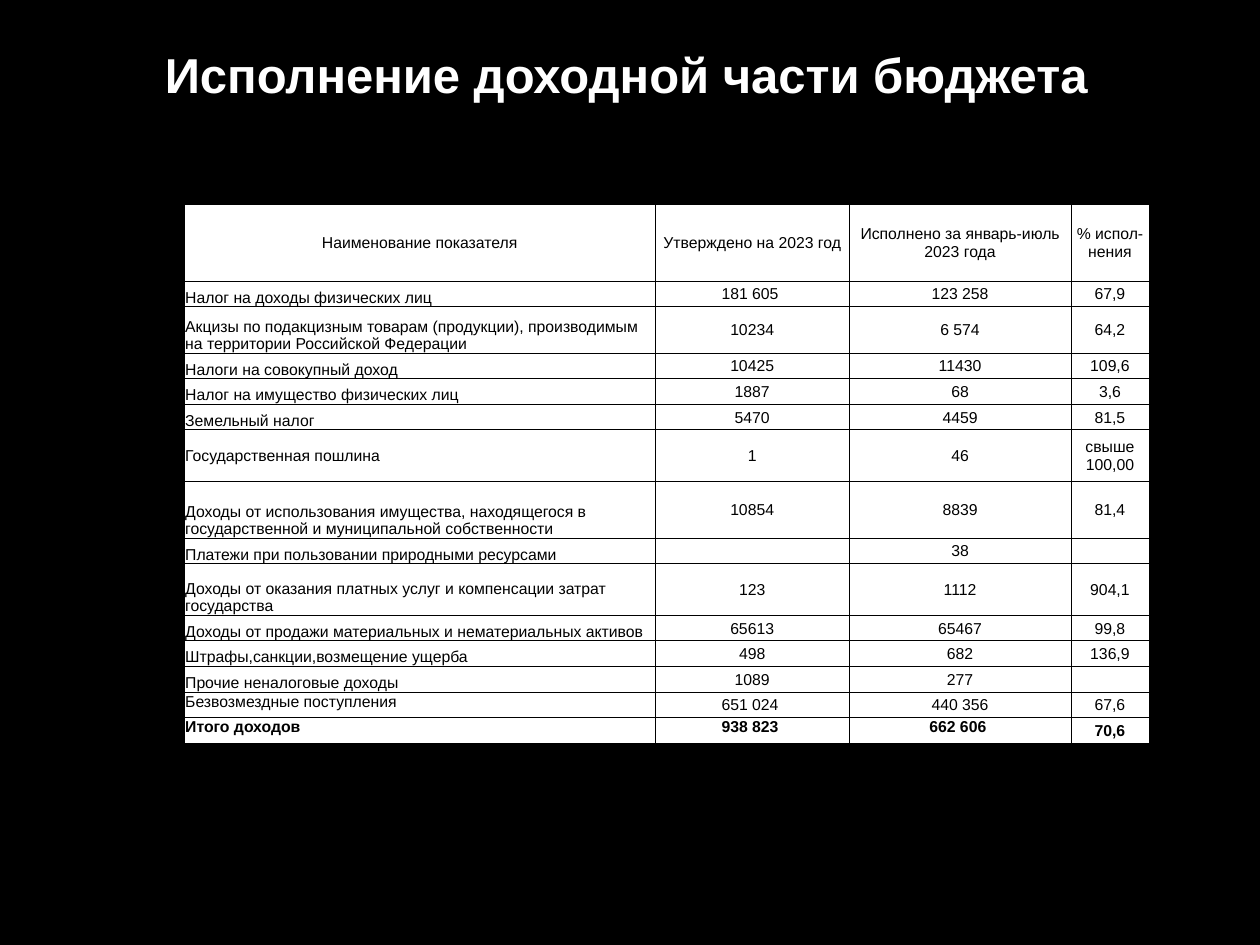
from dataclasses import dataclass

from lxml import etree
from pptx import Presentation
from pptx.dml.color import RGBColor
from pptx.enum.text import MSO_ANCHOR, PP_ALIGN
from pptx.oxml.ns import qn
from pptx.util import Inches, Pt

TOP, MIDDLE, BOTTOM = MSO_ANCHOR.TOP, MSO_ANCHOR.MIDDLE, MSO_ANCHOR.BOTTOM
LEFT, CENTER, JUSTIFY = PP_ALIGN.LEFT, PP_ALIGN.CENTER, PP_ALIGN.JUSTIFY
BLACK, WHITE = "000000", "FFFFFF"
FONT = "Arial"
TABLE_HEIGHT = 4.28
COLUMN_WIDTHS = (3.74, 1.54, 1.76, 0.62)


@dataclass
class BudgetRow:
    name: str
    approved: str
    executed: str
    percent: str
    height: float | None = None
    name_anchor: int = BOTTOM
    name_alignment: int = LEFT
    sum_anchor: int = MIDDLE
    bold: bool = False


ROWS = [
    BudgetRow("Наименование показателя", "Утверждено на 2023 год",
              "Исполнено за январь-июль 2023 года", "% испол-нения", 0.61, MIDDLE, CENTER),
    BudgetRow("Налог на доходы физических лиц", "181 605 ", "123 258", "67,9"),
    BudgetRow("Акцизы по подакцизным товарам (продукции), производимым на территории "
              "Российской Федерации", "10234", "6 574", "64,2", 0.37),
    BudgetRow("Налоги на совокупный доход", "10425", "11430", "109,6"),
    BudgetRow("Налог на имущество физических лиц", "1887", "68", "3,6"),
    BudgetRow("Земельный налог", "5470", "4459", "81,5"),
    BudgetRow("Государственная пошлина", "1", "46", "свыше 100,00", 0.41, MIDDLE),
    BudgetRow("Доходы от использования имущества, находящегося в государственной и "
              "муниципальной собственности", "10854", "8839", "81,4", 0.45),
    BudgetRow("Платежи при пользовании природными ресурсами", "", "38", ""),
    BudgetRow("Доходы от оказания платных услуг и компенсации затрат государства",
              "123", "1112", "904,1", 0.41),
    BudgetRow("Доходы от продажи материальных и нематериальных активов",
              "65613", "65467", "99,8"),
    BudgetRow("Штрафы,санкции,возмещение ущерба", "498", "682", "136,9"),
    BudgetRow("Прочие неналоговые доходы", "1089", "277", ""),
    BudgetRow("Безвозмездные поступления", "651 024 ", "440 356", "67,6",
              name_anchor=TOP, name_alignment=JUSTIFY),
    BudgetRow("Итого доходов", "938 823 ", "662 606 ", "70,6",
              name_anchor=TOP, name_alignment=JUSTIFY, sum_anchor=TOP, bold=True),
]


def color(value: str) -> RGBColor:
    return RGBColor.from_string(value)


def format_paragraph(paragraph, size: float, text_color: str, bold: bool, alignment) -> None:
    paragraph.alignment = alignment
    paragraph.font.name = FONT
    paragraph.font.size = Pt(size)
    paragraph.font.bold = bold
    paragraph.font.color.rgb = color(text_color)


def add_borders(cell) -> None:
    properties = cell._tc.get_or_add_tcPr()
    for side in ("a:lnL", "a:lnR", "a:lnT", "a:lnB"):
        line = etree.SubElement(properties, qn(side), w=str(Pt(0.5)))
        fill = etree.SubElement(line, qn("a:solidFill"))
        etree.SubElement(fill, qn("a:srgbClr"), val=BLACK)


def fill_cell(cell, text: str, anchor, alignment, bold: bool) -> None:
    add_borders(cell)
    cell.fill.solid()
    cell.fill.fore_color.rgb = color(WHITE)
    cell.margin_left = cell.margin_top = cell.margin_right = Inches(0.01)
    cell.margin_bottom = 0
    cell.vertical_anchor = anchor
    paragraph = cell.text_frame.paragraphs[0]
    if text:
        paragraph.text = text
    else:
        paragraph._p.get_or_add_endParaRPr().set("sz", str(Pt(9).centipoints))
    format_paragraph(paragraph, 9, BLACK, bold, alignment)


def add_title(slide, text: str) -> None:
    title = slide.shapes.title
    title.left, title.top = Inches(0.47), Inches(0.23)
    title.width, title.height = Inches(9), Inches(0.72)
    title.text_frame.text = text
    title.text_frame.vertical_anchor = MIDDLE
    format_paragraph(title.text_frame.paragraphs[0], 28, WHITE, True, CENTER)


def add_budget_table(slide, rows: list[BudgetRow]) -> None:
    table = slide.shapes.add_table(
        len(rows), len(COLUMN_WIDTHS), Inches(1.46), Inches(1.62),
        Inches(sum(COLUMN_WIDTHS)), Inches(TABLE_HEIGHT)).table
    table.first_row = table.horz_banding = False
    for column, width in zip(table.columns, COLUMN_WIDTHS):
        column.width = Inches(width)
    tall_heights = [row.height for row in rows if row.height]
    line_height = (TABLE_HEIGHT - sum(tall_heights)) / (len(rows) - len(tall_heights))
    for table_row, row in zip(table.rows, rows):
        table_row.height = Inches(row.height or line_height)
        name, approved, executed, percent = table_row.cells
        fill_cell(name, row.name, row.name_anchor, row.name_alignment, row.bold)
        fill_cell(approved, row.approved, row.sum_anchor, CENTER, row.bold)
        fill_cell(executed, row.executed, row.sum_anchor, CENTER, row.bold)
        fill_cell(percent, row.percent, MIDDLE, CENTER, row.bold)


def main() -> None:
    presentation = Presentation()
    presentation.slide_width, presentation.slide_height = Inches(10), Inches(7.5)
    slide = presentation.slides.add_slide(presentation.slide_layouts[5])
    slide.background.fill.solid()
    slide.background.fill.fore_color.rgb = color(BLACK)
    add_title(slide, "Исполнение доходной части бюджета")
    add_budget_table(slide, ROWS)
    presentation.save("out.pptx")


if __name__ == "__main__":
    main()
